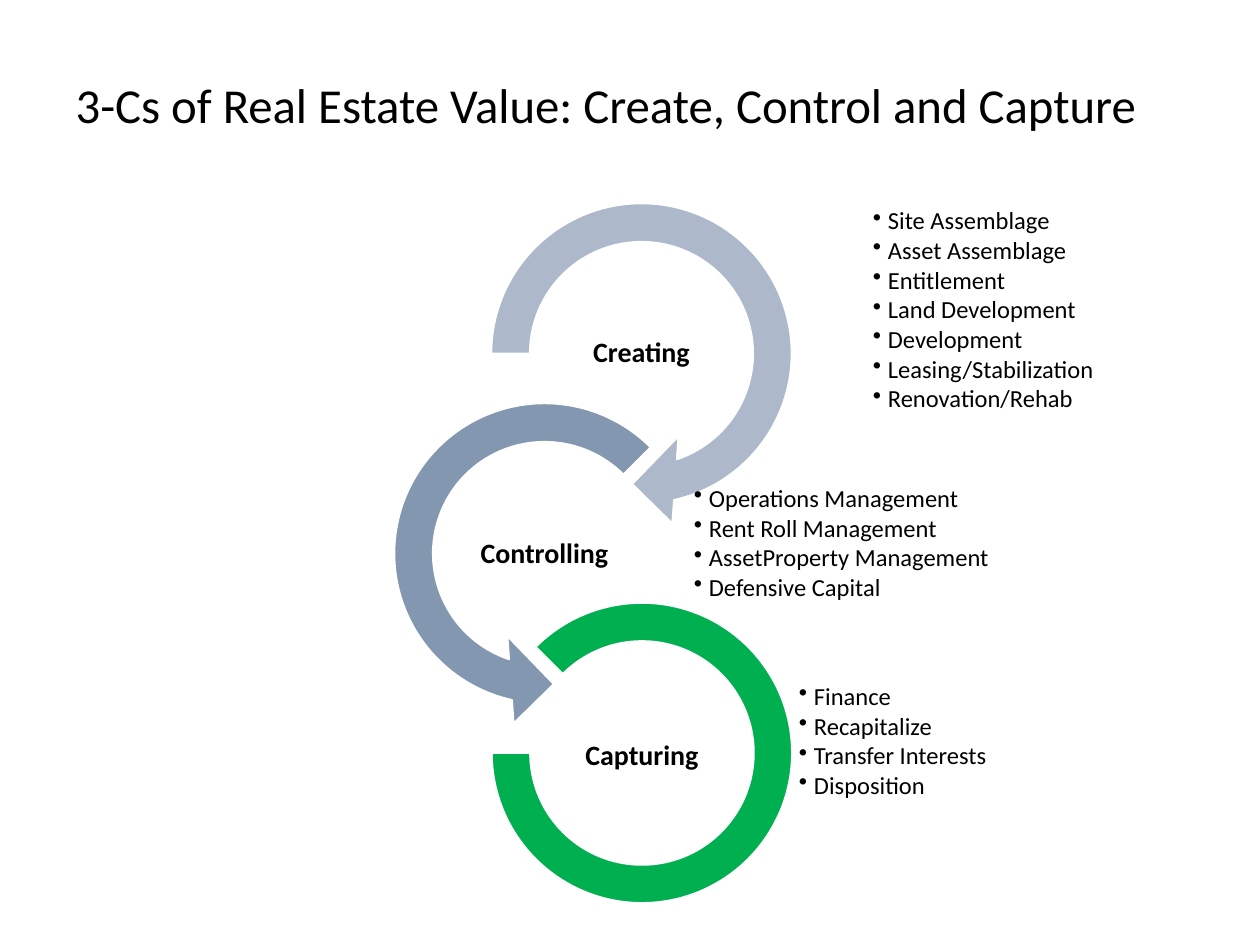
from lxml import etree
from pptx import Presentation
from pptx.dml.color import RGBColor
from pptx.enum.shapes import MSO_SHAPE
from pptx.enum.text import MSO_ANCHOR, PP_ALIGN
from pptx.oxml.ns import qn
from pptx.util import Emu, Pt

EMU_PER_PX = 914400 / 126
CIRCULAR_ARROW = MSO_SHAPE.CIRCULAR_ARROW
LEFT_CIRCULAR_ARROW = MSO_SHAPE.LEFT_CIRCULAR_ARROW
BLOCK_ARC = MSO_SHAPE.BLOCK_ARC
MIDDLE = MSO_ANCHOR.MIDDLE
LEFT, CENTER = PP_ALIGN.LEFT, PP_ALIGN.CENTER

FONT = "Calibri"
COLORS = {
    "text": "000000",
    "outline": "FFFFFF",
    "creating": "ADB9CA",
    "controlling": "8497B0",
    "capturing": "00B050",
}
LABEL_HEIGHT = 97
BULLET_INDENT = 15

STAGES = [
    {
        "name": "Creating",
        "ring": CIRCULAR_ARROW,
        "box": (467, 179, 349, 349),
        "adjustments": (0.11, 11.42, 45, 108, 0.125),
        "label": (126, 194),
        "list": (872, 210, 290, 202),
        "items": ["Site Assemblage", "Asset Assemblage", "Entitlement", "Land Development",
                  "Development", "Leasing/Stabilization", "Renovation/Rehab"],
    },
    {
        "name": "Controlling",
        "ring": LEFT_CIRCULAR_ARROW,
        "box": (370, 379, 349, 349),
        "adjustments": (0.11, 11.42, 63, 189, 0.125),
        "label": (127, 242),
        "list": (693, 474, 406, 140),
        "items": ["Operations Management", "Rent Roll Management",
                  "AssetProperty Management", "Defensive Capital"],
    },
    {
        "name": "Capturing",
        "ring": BLOCK_ARC,
        "box": (492, 603, 300, 300),
        "adjustments": (135, 108, 0.127),
        "label": (105, 194),
        "list": (798, 672, 239, 140),
        "items": ["Finance", "Recapitalize", "Transfer Interests", "Disposition"],
    },
]


def px(length):
    return Emu(round(length * EMU_PER_PX))


def color(name):
    return RGBColor.from_string(COLORS[name])


def format_paragraph(paragraph, size, align, space_after=0, bold=False):
    paragraph.alignment = align
    paragraph.line_spacing = 0.9
    paragraph.space_after = Pt(space_after)
    paragraph.font.name = FONT
    paragraph.font.size = Pt(size)
    paragraph.font.bold = bold
    paragraph.font.color.rgb = color("text")


def add_bullet(paragraph):
    properties = paragraph._p.get_or_add_pPr()
    properties.set("marL", str(px(BULLET_INDENT)))
    properties.set("indent", str(-px(BULLET_INDENT)))
    etree.SubElement(properties, qn("a:buChar"), char="•")
    properties.append(properties.find(qn("a:defRPr")))


def add_text_frame(slide, box):
    frame = slide.shapes.add_textbox(*map(px, box)).text_frame
    frame.word_wrap = True
    frame.vertical_anchor = MIDDLE
    frame.margin_left = frame.margin_right = px(1)
    frame.margin_top = frame.margin_bottom = px(1)
    return frame


def add_title(slide, box, text):
    title = slide.shapes.title
    title.left, title.top, title.width, title.height = map(px, box)
    title.text_frame.text = text
    title.text_frame.word_wrap = True
    title.text_frame.vertical_anchor = MIDDLE
    format_paragraph(title.text_frame.paragraphs[0], 27.9, LEFT)


def add_stage(slide, stage):
    left, top, width, height = stage["box"]
    ring = slide.shapes.add_shape(stage["ring"], px(left), px(top), px(width), px(height))
    for index, value in enumerate(stage["adjustments"]):
        ring.adjustments[index] = value
    ring.shadow.inherit = False
    ring.fill.solid()
    ring.fill.fore_color.rgb = color(stage["name"].lower())
    ring.line.color.rgb = color("outline")
    ring.line.width = Pt(1)

    label_top, label_width = stage["label"]
    label_left = left + (width - label_width) / 2
    frame = add_text_frame(slide, (label_left, top + label_top, label_width, LABEL_HEIGHT))
    frame.text = stage["name"]
    format_paragraph(frame.paragraphs[0], 16, CENTER, space_after=5.6, bold=True)


def add_bullet_list(slide, box, items):
    frame = add_text_frame(slide, box)
    frame.text = "\n".join(items)
    for paragraph in frame.paragraphs:
        format_paragraph(paragraph, 14, LEFT, space_after=1.8)
        add_bullet(paragraph)


def main():
    presentation = Presentation()
    presentation.slide_width, presentation.slide_height = px(1260), px(945)
    slide = presentation.slides.add_slide(presentation.slide_layouts[5])
    add_title(slide, (63, 48, 1134, 120),
              "3-Cs of Real Estate Value: Create, Control and Capture")
    for stage in STAGES:
        add_stage(slide, stage)
    for stage in STAGES:
        add_bullet_list(slide, stage["list"], stage["items"])
    presentation.save("out.pptx")


if __name__ == "__main__":
    main()
